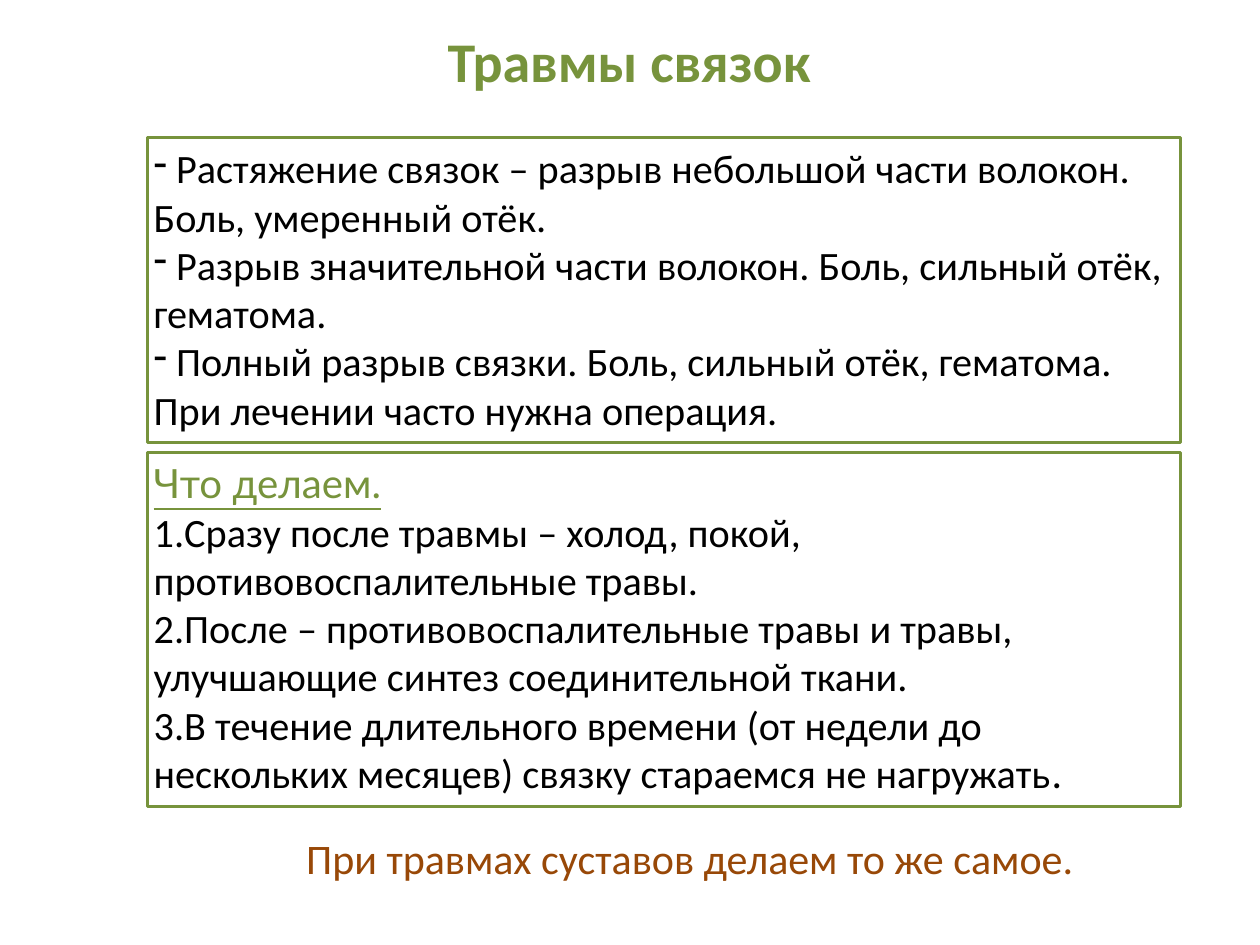
from lxml import etree
from pptx import Presentation
from pptx.dml.color import RGBColor
from pptx.enum.shapes import MSO_SHAPE
from pptx.enum.text import MSO_ANCHOR, MSO_AUTO_SIZE, PP_ALIGN
from pptx.oxml.ns import qn
from pptx.util import Inches, Pt

RECTANGLE = MSO_SHAPE.RECTANGLE
TOP = MSO_ANCHOR.TOP
LEFT, CENTER = PP_ALIGN.LEFT, PP_ALIGN.CENTER
NO_AUTOFIT = MSO_AUTO_SIZE.NONE

GREEN, BROWN, BLACK = "77933C", "984807", "000000"
BODY_SIZE = 23

# Content
TITLE = "Травмы связок"
INJURIES = [
    " Растяжение связок – разрыв небольшой части волокон. Боль, умеренный отёк.",
    " Разрыв значительной части волокон. Боль, сильный отёк, гематома.",
    " Полный разрыв связки. Боль, сильный отёк, гематома. При лечении часто нужна операция.",
]
ACTIONS_HEADING = "Что делаем."
ACTIONS = [
    ["Сразу после травмы – холод, покой, противовоспалительные травы."],
    ["После – противовоспалительные травы и травы, улучшающие синтез соединительной ткани."],
    ["В течение длительного времени (от недели до нескольких месяцев) "
     "связку стараемся не нагружать", "."],
]
JOINTS_NOTE = "При травмах суставов делаем то же самое."


def color(hex_code):
    return RGBColor.from_string(hex_code)


def add_run(paragraph, text, size, hex_code, font="Calibri", bold=False, underline=False):
    run = paragraph.add_run()
    run.text = text
    run.font.name = font
    run.font.size = Pt(size)
    run.font.bold = bold
    run.font.underline = underline
    run.font.color.rgb = color(hex_code)


def add_bullet(paragraph, tag, indent=0, **attributes):
    properties = paragraph._p.get_or_add_pPr()
    properties.set("marL", "0")
    properties.set("indent", str(Inches(indent)))
    etree.SubElement(properties, qn(tag), attributes)


def add_panel(slide, top, height):
    panel = slide.shapes.add_shape(
        RECTANGLE, Inches(1.17), Inches(top), Inches(8.2), Inches(height))
    panel.shadow.inherit = False
    panel.fill.background()
    panel.line.color.rgb = color(GREEN)
    panel.line.width = Pt(1.5)
    frame = panel.text_frame
    frame.word_wrap = True
    frame.vertical_anchor = TOP
    frame.margin_left = frame.margin_right = Inches(0.05)
    frame.margin_top = frame.margin_bottom = Inches(0.05)
    return frame


def next_paragraph(frame, index):
    paragraph = frame.add_paragraph() if index else frame.paragraphs[0]
    paragraph.alignment = LEFT
    return paragraph


def main():
    deck = Presentation()
    deck.slide_width, deck.slide_height = Inches(10), Inches(7.5)
    slide = deck.slides.add_slide(deck.slide_layouts[5])

    # Title
    title = slide.shapes.title
    title.left, title.top = Inches(3.44), Inches(0.16)
    title.width, title.height = Inches(3.11), Inches(0.64)
    title.text_frame.word_wrap = False
    title.text_frame.auto_size = NO_AUTOFIT
    title.text_frame.vertical_anchor = TOP
    add_run(title.text_frame.paragraphs[0], TITLE, 32, GREEN, bold=True)

    # Kinds of injury
    injuries = add_panel(slide, 1.09, 2.42)
    for index, injury in enumerate(INJURIES):
        paragraph = next_paragraph(injuries, index)
        add_bullet(paragraph, "a:buChar", char="-")
        add_run(paragraph, injury, BODY_SIZE, BLACK)

    # What to do
    actions = add_panel(slide, 3.59, 2.81)
    add_run(next_paragraph(actions, 0), ACTIONS_HEADING, BODY_SIZE, GREEN,
            font="Lato", underline=True)
    for index, parts in enumerate(ACTIONS, start=1):
        paragraph = next_paragraph(actions, index)
        add_bullet(paragraph, "a:buAutoNum", indent=-0.5, type="arabicPeriod")
        for part, font in zip(parts, ("Calibri", "Lato")):
            add_run(paragraph, part, BODY_SIZE, BLACK, font=font)

    # Note on joints
    note = slide.shapes.add_textbox(Inches(1.41), Inches(6.56), Inches(8.13), Inches(0.5))
    note.text_frame.word_wrap = True
    note_line = note.text_frame.paragraphs[0]
    note_line.alignment = CENTER
    add_run(note_line, JOINTS_NOTE, 24, BROWN)

    deck.save("out.pptx")


if __name__ == "__main__":
    main()
